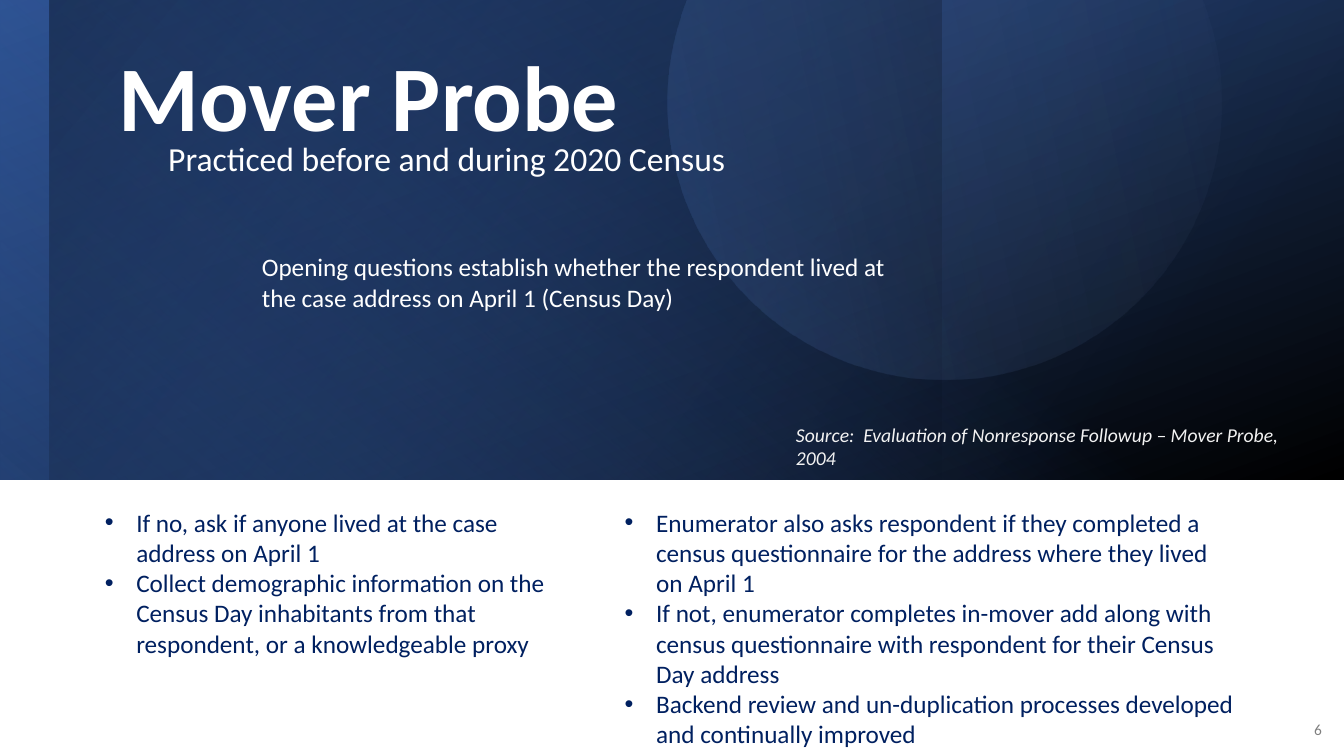
import dataclasses
import math

import pptx
import pptx.dml.color
import pptx.enum.shapes
import pptx.enum.text
import pptx.oxml
import pptx.oxml.ns
import pptx.util

Cm = pptx.util.Cm
Pt = pptx.util.Pt
ALIGN = pptx.enum.text.PP_ALIGN
ANCHOR = pptx.enum.text.MSO_ANCHOR
SHAPE = pptx.enum.shapes.MSO_SHAPE


@dataclasses.dataclass(frozen=True)
class Theme:
    font: str = "Calibri"
    white: str = "FFFFFF"
    pale: str = "F2F2F2"
    gray: str = "808080"
    navy: str = "002060"
    black: str = "000000"
    blue: str = "4472C4"
    deep_blue: str = "2F5597"
    dark_blue: str = "203864"
    light_blue: str = "8FAADC"
    title_size: int = 66
    subtitle_size: int = 24
    body_size: int = 18
    source_size: int = 14
    number_size: int = 11


class SlideBuilder:
    def __init__(self, slide, theme):
        self.slide = slide
        self.theme = theme

    def place(self, shape, box):
        shape.left, shape.top, shape.width, shape.height = (Cm(value) for value in box)

    def style(self, paragraph, size, color, bold=False, italic=False):
        paragraph.font.name = self.theme.font
        paragraph.font.size = Pt(size)
        paragraph.font.bold = bold
        paragraph.font.italic = italic
        paragraph.font.color.rgb = pptx.dml.color.RGBColor.from_string(color)

    def gradient(self, shape, stops, angle):
        """Stops are (position %, color, opacity %); the angle runs clockwise."""
        shape.shadow.inherit = False
        shape.line.fill.background()
        shape.fill.background()
        stop_xml = "".join(
            f'<a:gs pos="{position * 1000}"><a:srgbClr val="{color}">'
            f'<a:alpha val="{opacity * 1000}"/></a:srgbClr></a:gs>'
            for position, color, opacity in stops
        )
        properties = shape.element.spPr
        properties.replace(
            properties.find(pptx.oxml.ns.qn("a:noFill")),
            pptx.oxml.parse_xml(
                f'<a:gradFill {pptx.oxml.ns.nsdecls("a")} rotWithShape="1">'
                f'<a:gsLst>{stop_xml}</a:gsLst>'
                f'<a:lin ang="{angle * 60000}" scaled="0"/></a:gradFill>'
            ),
        )

    def panel(self, box, rotation, stops, angle):
        shape = self.slide.shapes.add_shape(SHAPE.RECTANGLE, *(Cm(value) for value in box))
        shape.rotation = rotation
        self.gradient(shape, stops, angle)

    def cut_circle(self, center, radius, chord_top, pivot, rotation, stops, angle):
        """Circle cut along a level chord, drawn turned back so that rotation levels it."""
        chord_angle = math.asin((center[1] - chord_top) / radius)
        turn = math.radians(-rotation)
        steps = 120
        points = []
        for step in range(steps + 1):
            arc = -chord_angle + (math.pi + 2 * chord_angle) * step / steps
            x = center[0] + radius * math.cos(arc) - pivot[0]
            y = center[1] + radius * math.sin(arc) - pivot[1]
            points.append((
                Cm(pivot[0] + x * math.cos(turn) - y * math.sin(turn)),
                Cm(pivot[1] + x * math.sin(turn) + y * math.cos(turn)),
            ))
        builder = self.slide.shapes.build_freeform(*points[0])
        builder.add_line_segments(points[1:], close=True)
        shape = builder.convert_to_shape()
        shape.rotation = rotation
        self.gradient(shape, stops, angle)

    def placeholder(self, index, box):
        shape = self.slide.placeholders[index]
        self.place(shape, box)
        shape.element.getparent().append(shape.element)  # in front of the panels
        shape.text_frame.auto_size = pptx.enum.text.MSO_AUTO_SIZE.NONE
        return shape

    def title(self, text, box):
        frame = self.placeholder(0, box).text_frame
        frame.text = text
        frame.vertical_anchor = ANCHOR.BOTTOM
        paragraph = frame.paragraphs[0]
        paragraph.alignment = ALIGN.LEFT
        paragraph.line_spacing = 0.9
        self.style(paragraph, self.theme.title_size, self.theme.white, bold=True)

    def bullets(self, index, items, box):
        frame = self.placeholder(index, box).text_frame
        frame.text = "\n".join(items)
        frame.vertical_anchor = ANCHOR.TOP
        indent = Cm(0.79)
        for paragraph in frame.paragraphs:
            properties = paragraph._p.get_or_add_pPr()
            properties.set("marL", str(indent))
            properties.set("indent", str(-indent))
            for tag, attribute, value in (("buFont", "typeface", "Arial"), ("buChar", "char", "•")):
                bullet = pptx.oxml.parse_xml(
                    f'<a:{tag} {pptx.oxml.ns.nsdecls("a")} {attribute}="{value}"/>')
                properties.append(bullet)
            paragraph.line_spacing = 1.0
            paragraph.space_before = Pt(0)
            self.style(paragraph, self.theme.body_size, self.theme.navy)

    def text(self, text, box, size, color, italic=False):
        frame = self.slide.shapes.add_textbox(*(Cm(value) for value in box)).text_frame
        frame.word_wrap = True
        frame.text = text
        self.style(frame.paragraphs[0], size, color, italic=italic)

    def slide_number(self, text, box):
        shape = self.slide.shapes.add_shape(SHAPE.OVAL, *(Cm(value) for value in box))
        shape.shadow.inherit = False
        shape.fill.background()
        shape.line.fill.background()
        shape.text_frame.text = text
        shape.text_frame.vertical_anchor = ANCHOR.MIDDLE
        paragraph = shape.text_frame.paragraphs[0]
        paragraph.alignment = ALIGN.RIGHT
        paragraph.line_spacing = 0.9
        self.style(paragraph, self.theme.number_size, self.theme.gray)


def main():
    presentation = pptx.Presentation()
    presentation.slide_width, presentation.slide_height = Cm(33.87), Cm(19.05)
    theme = Theme()
    builder = SlideBuilder(presentation.slides.add_slide(presentation.slide_layouts[3]), theme)

    # Layered header background
    band = 12.14
    builder.panel((0, -0.05, 33.87, band), 180,
                  [(0, theme.deep_blue, 100), (100, theme.black, 100)], 250)
    builder.panel((10.85, -10.92, band, 33.87), 90,
                  [(40, theme.blue, 0), (100, theme.deep_blue, 52)], 40)
    builder.panel((11.48, -10.29, band, 32.61), 90,
                  [(17, theme.blue, 0), (100, theme.black, 37)], 130)
    builder.panel((0, -0.05, 23.72, band), 0,
                  [(0, theme.dark_blue, 0), (100, theme.black, 25)], 310)
    builder.cut_circle((23.8, 2.58), 6.99, -0.03, (23.44, 3.29), 208.5,
                       [(0, theme.blue, 22), (87, theme.light_blue, 2)], 140)

    # Header text
    builder.title("Mover Probe", (2.74, 0.64, 27.91, 3.3))
    builder.slide_number("6", (32.51, 17.91, 1.24, 1.02))
    builder.text("Practiced before and during 2020 Census", (3.99, 3.35, 14.81, 1.27),
                 theme.subtitle_size, theme.white)

    # Bullet columns
    builder.bullets(1, [
        "If no, ask if anyone lived at the case address on April 1",
        "Collect demographic information on the Census Day inhabitants from that "
        "respondent, or a knowledgeable proxy",
    ], (2.39, 12.65, 12.42, 4.11))
    builder.bullets(2, [
        "Enumerator also asks respondent if they completed a census questionnaire "
        "for the address where they lived on April 1",
        "If not, enumerator completes in-mover add along with census questionnaire "
        "with respondent for their Census Day address",
        "Backend review and un-duplication processes developed and continually improved",
    ], (15.49, 12.65, 15.98, 7.95))

    # Opening statement and source
    builder.text("Opening questions establish whether the respondent lived at the case "
                 "address on April 1 (Census Day)", (6.35, 6.22, 16.94, 1.8),
                 theme.body_size, theme.white)
    builder.text("Source:  Evaluation of Nonresponse Followup – Mover Probe, 2004",
                 (19.81, 10.52, 13.39, 1.45), theme.source_size, theme.pale, italic=True)

    presentation.save("out.pptx")


if __name__ == "__main__":
    main()
